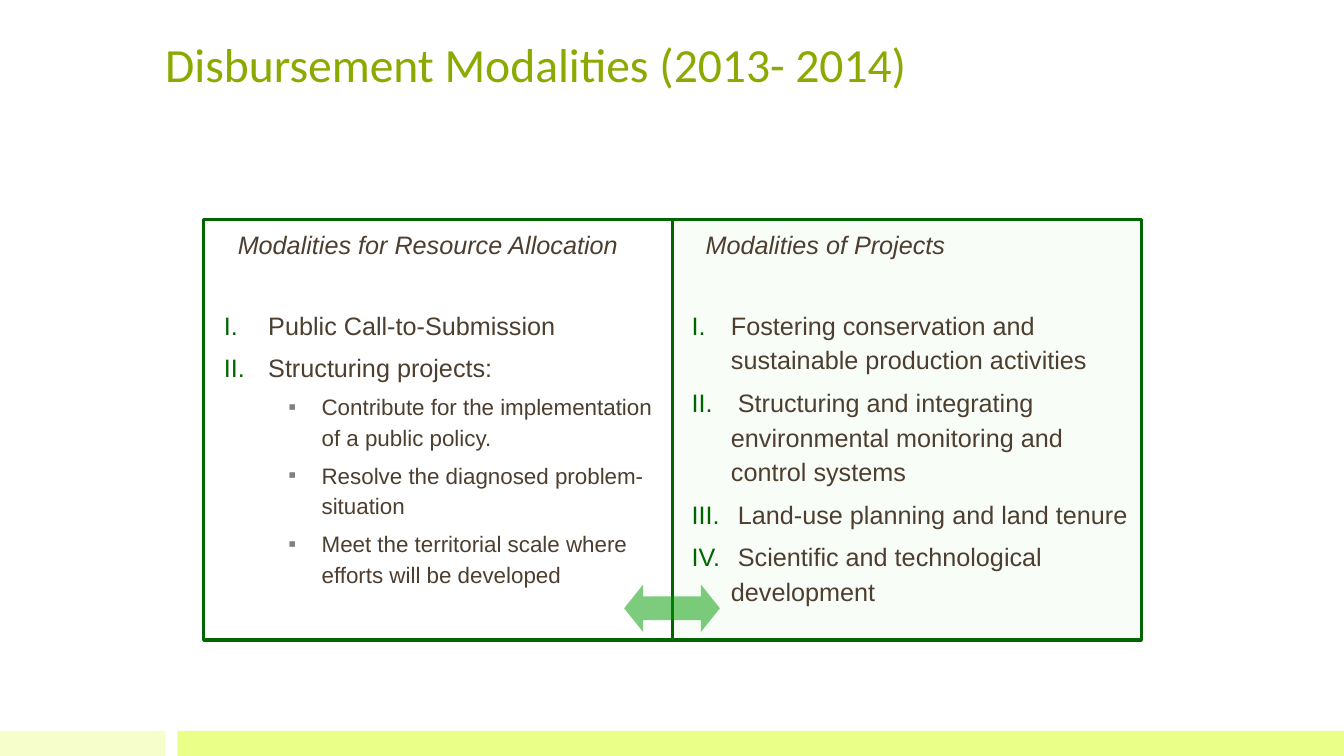
from lxml.etree import SubElement as Sub
from pptx import Presentation
from pptx.dml.color import RGBColor as RGB
from pptx.enum.shapes import MSO_SHAPE as Shape
from pptx.oxml.ns import qn
from pptx.util import Pt

PALE = RGB(0xF6, 0xFF, 0xCC)
LIME = RGB(0xE9, 0xFF, 0x88)
OLIVE = RGB(0x8B, 0xAA, 0x00)
GREEN = RGB(0x00, 0x66, 0x00)
MINT = RGB(0xCA, 0xF2, 0xCA)
LEAF = RGB(0x00, 0x99, 0x00)
BROWN = RGB(0x4D, 0x3E, 0x2F)
GRAY = RGB(0x80, 0x80, 0x80)

PX = 9144


class Page:
    font = "Arial"
    ink = BROWN
    size = 18

    def __init__(self, deck):
        self.slide = deck.slides.add_slide(deck.slide_layouts[6])

    def shape(self, kind, box, fill=None, alpha=100, line=None):
        item = self.slide.shapes.add_shape(kind, *(n * PX for n in box))
        item.shadow.inherit = False
        if fill is None:
            item.fill.background()
        else:
            item.fill.solid()
            item.fill.fore_color.rgb = fill
            if alpha < 100:
                tint = item.fill._xPr.find(".//" + qn("a:srgbClr"))
                Sub(tint, qn("a:alpha"), val=str(alpha * 1000))
        if line is None:
            item.line.fill.background()
        else:
            item.line.color.rgb = line
            item.line.width = Pt(2.25)
        return item

    def frame(self, box):
        frame = self.slide.shapes.add_textbox(*(n * PX for n in box)).text_frame
        frame.word_wrap = True
        return frame

    def style(self, para, text, size=None, font=None, ink=None):
        para.text = text
        para.font.size = Pt(size or self.size)
        para.font.name = font or self.font
        para.font.color.rgb = ink or self.ink

    def title(self, box, text):
        self.style(self.frame(box).paragraphs[0], text, 34, "Calibri", OLIVE)

    def head(self, box, text):
        para = self.frame(box).paragraphs[0]
        self.style(para, text)
        para.font.italic = True
        para.line_spacing = 0.9

    def bullet(self, para, left, hang, ink, mark=None):
        props = para._p.get_or_add_pPr()
        props.set("marL", str(left * PX))
        props.set("indent", str(-hang * PX))
        para.line_spacing = 1.15
        gap = Sub(props, qn("a:spcBef"))
        Sub(gap, qn("a:spcPct"), val="30000")
        tint = Sub(props, qn("a:buClr"))
        Sub(tint, qn("a:srgbClr"), val=str(ink))
        Sub(props, qn("a:buFont"), typeface=self.font)
        if mark:
            Sub(props, qn("a:buChar"), char=mark)
        else:
            Sub(props, qn("a:buAutoNum"), type="romanUcPeriod")

    def items(self, box, hang, rows):
        frame = self.frame(box)
        frame.margin_left = frame.margin_right = 0
        frame.margin_top = frame.margin_bottom = 0
        for i, (level, text) in enumerate(rows):
            para = frame.add_paragraph() if i else frame.paragraphs[0]
            para.level = level
            if level:
                self.bullet(para, 97, 33, GRAY, "▪")
            else:
                self.bullet(para, hang, hang, GREEN)
            self.style(para, text, 16 if level else 18)


def main():
    deck = Presentation()
    deck.slide_width = 1333 * PX
    deck.slide_height = 750 * PX
    page = Page(deck)

    page.shape(Shape.RECTANGLE, (0, 725, 164, 25), PALE)
    page.shape(Shape.RECTANGLE, (176, 725, 1157, 25), LIME)

    page.shape(Shape.RECTANGLE, (202, 218, 465, 417), line=GREEN)
    page.shape(Shape.RECTANGLE, (667, 218, 465, 417), MINT, 12, GREEN)

    page.items((222, 303, 429, 245), 44, [
        (0, "Public Call-to-Submission"),
        (0, "Structuring projects:"),
        (1, "Contribute for the implementation of a public policy."),
        (1, "Resolve the diagnosed problem-situation"),
        (1, "Meet the territorial scale where efforts will be developed"),
    ])
    page.items((686, 303, 437, 245), 39, [
        (0, "Fostering conservation and sustainable production activities"),
        (0, " Structuring and integrating environmental monitoring and control systems"),
        (0, " Land-use planning and land tenure"),
        (0, " Scientific and technological development"),
    ])
    page.head((226, 226, 422, 37), "Modalities for Resource Allocation")
    page.head((690, 226, 422, 37), "Modalities of Projects")

    arrow = page.shape(Shape.LEFT_RIGHT_ARROW, (619, 580, 95, 47), LEAF, 51)
    arrow.adjustments[0] = 0.5
    arrow.adjustments[1] = 0.4

    page.title((154, 30, 1025, 129), "Disbursement Modalities (2013- 2014)")
    deck.save("out.pptx")


if __name__ == "__main__":
    main()
